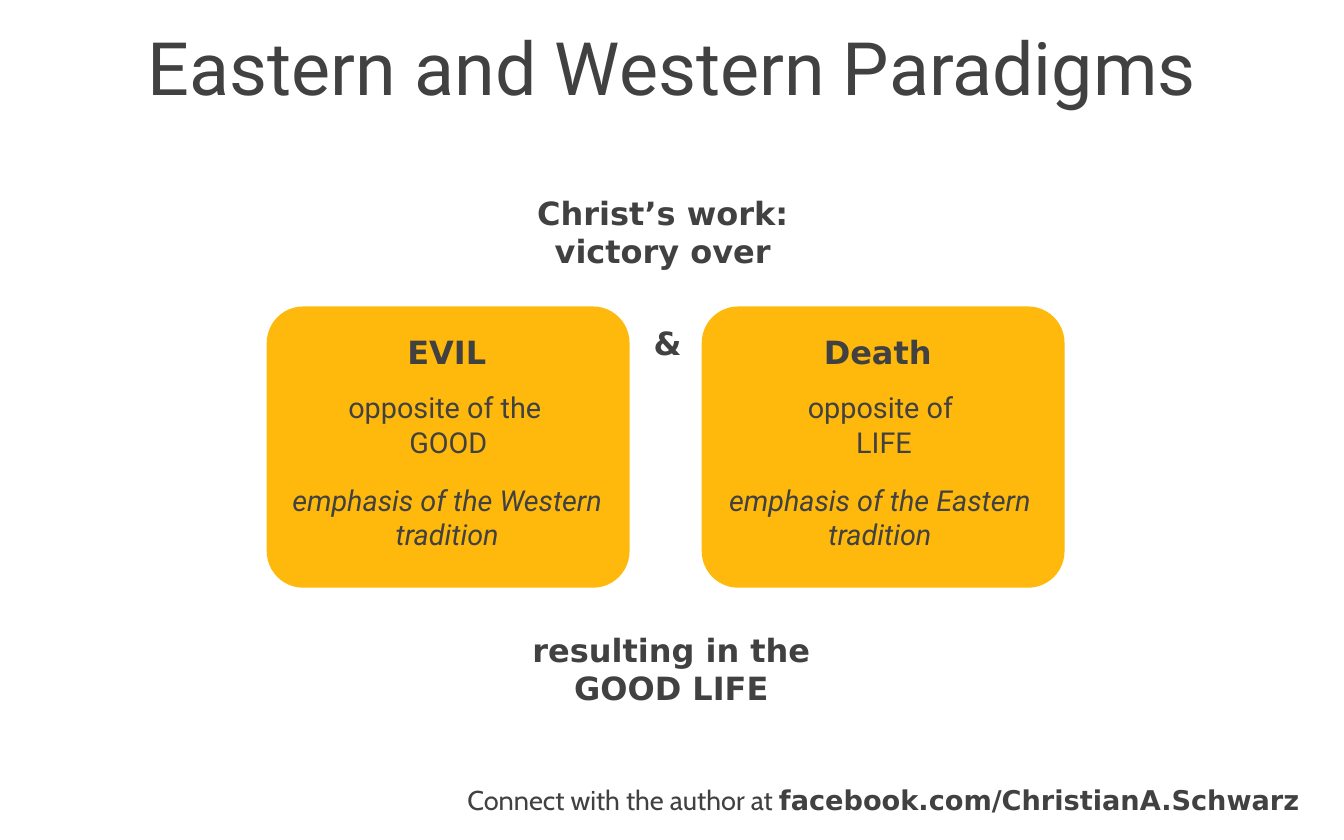
import pptx
import pptx.dml.color
import pptx.enum.shapes
import pptx.enum.text
import pptx.util
from pptx.util import Cm

INK = "414141"
GOLD = "FFB90C"
HEADING = ("DejaVu Sans", 40, True, False)
BODY = ("Roboto", 36, False, False)
EMPHASIS = ("Roboto", 36, False, True)
ALIGN = pptx.enum.text.PP_ALIGN


def color(value):
    return pptx.dml.color.RGBColor.from_string(value)


def write(box, lines, style, align=ALIGN.CENTER, inset=0, wrap=True):
    frame = box.text_frame
    frame.word_wrap = wrap
    frame.auto_size = pptx.enum.text.MSO_AUTO_SIZE.NONE
    frame.vertical_anchor = pptx.enum.text.MSO_ANCHOR.MIDDLE
    frame.margin_left = frame.margin_right = Cm(inset)
    frame.margin_top = frame.margin_bottom = Cm(inset)
    frame.text = "\n".join(lines)
    name, size, bold, italic = style
    for para in frame.paragraphs:
        para.alignment = align
        para.font.name = name
        para.font.size = pptx.util.Pt(size)
        para.font.bold = bold
        para.font.italic = italic
        para.font.color.rgb = color(INK)
    return frame


deck = pptx.Presentation()
deck.slide_width = Cm(59.26)
deck.slide_height = Cm(37.03)
page = deck.slides.add_slide(deck.slide_layouts[5])

title = page.shapes.title
title.left, title.top, title.width, title.height = Cm(1.63), Cm(-2.54), Cm(56.03), Cm(10.9)
write(title, ["Eastern and Western Paradigms"], ("Roboto", 92, False, False), inset=0.18)

cards = [
    (11.76, [
        (11.66, ["EVIL"]),
        (11.73, ["opposite of the ", "GOOD"]),
        (11.68, ["emphasis of the Western tradition"]),
    ]),
    (30.94, [
        (30.66, ["Death"]),
        (30.94, ["opposite of ", "LIFE"]),
        (30.76, ["emphasis of the Eastern tradition"]),
    ]),
]
rows = [(14.53, 1.98, HEADING), (16.92, 3.6, BODY), (21.03, 3.53, EMPHASIS)]

for card_left, texts in cards:
    card = page.shapes.add_shape(
        pptx.enum.shapes.MSO_SHAPE.ROUNDED_RECTANGLE,
        Cm(card_left), Cm(13.51), Cm(16), Cm(12.4))
    card.adjustments[0] = 0.13
    card.shadow.inherit = False
    card.fill.solid()
    card.fill.fore_color.rgb = color(GOLD)
    card.line.fill.background()
    for (left, lines), (top, height, style) in zip(texts, rows):
        box = page.shapes.add_textbox(Cm(left), Cm(top), Cm(16.08), Cm(height))
        write(box, lines, style)

statements = [
    (21.18, 8.41, 16.08, 3.6, ["Christ’s work:", "victory over"]),
    (28.78, 14.27, 1.3, 1.7, ["&"]),
    (21.56, 27.69, 16.08, 3.6, ["resulting in the", "GOOD LIFE"]),
]
for left, top, width, height, lines in statements:
    box = page.shapes.add_textbox(Cm(left), Cm(top), Cm(width), Cm(height))
    write(box, lines, HEADING, wrap=len(lines) > 1)

contact = page.shapes.add_textbox(Cm(20.4), Cm(34.52), Cm(36.9), Cm(1.45))
frame = write(contact, ["Connect with the author at "], ("Cabin", 34, False, False),
              align=ALIGN.RIGHT, wrap=False)
span = frame.paragraphs[0].add_run()
span.text = "facebook.com/ChristianA.Schwarz"
span.font.name = "DejaVu Sans"
span.font.bold = True

deck.save("out.pptx")
